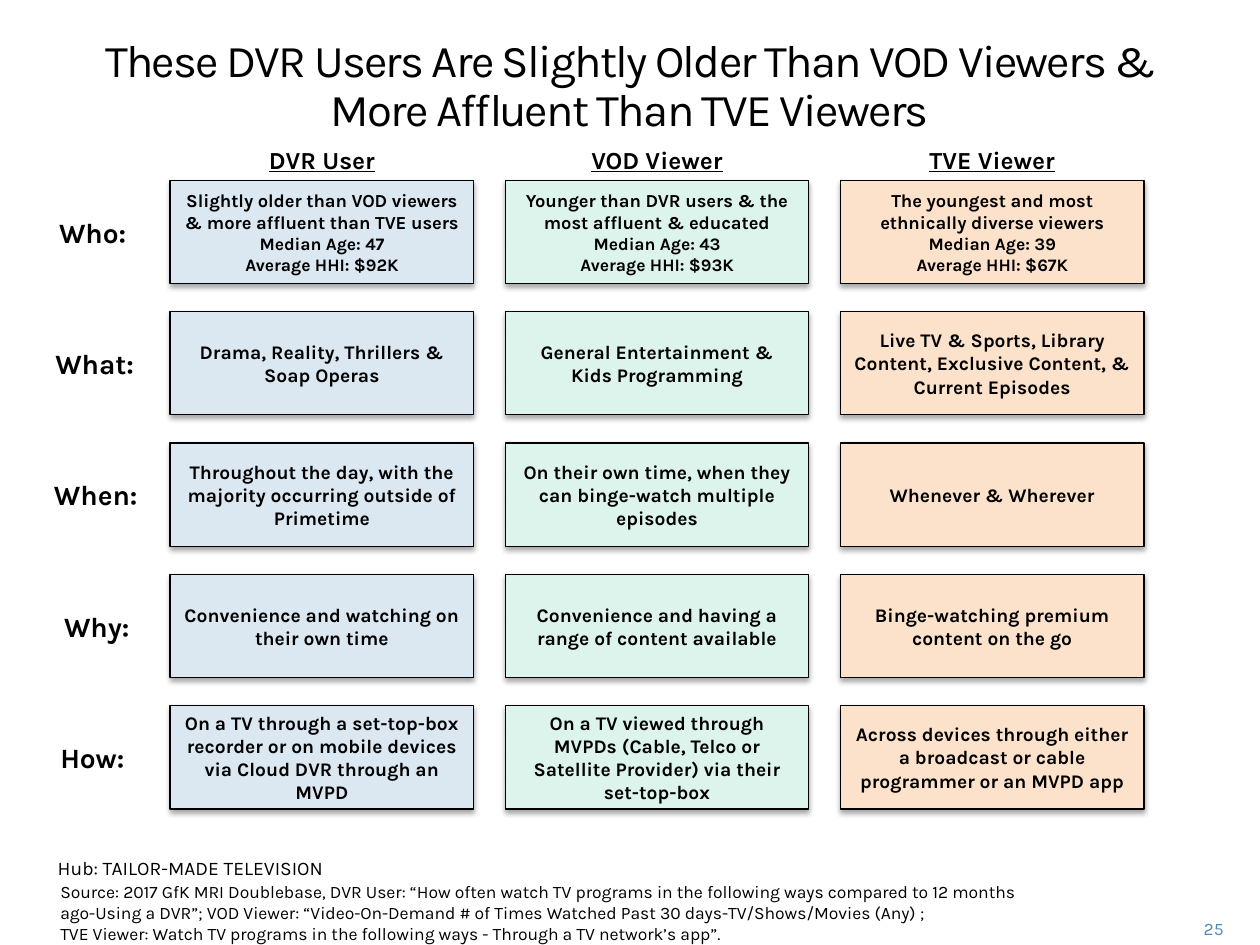
from dataclasses import dataclass

from lxml import etree
from pptx import Presentation
from pptx.dml.color import RGBColor
from pptx.enum.shapes import MSO_SHAPE
from pptx.enum.text import MSO_ANCHOR, PP_ALIGN
from pptx.oxml.ns import qn
from pptx.util import Inches, Pt

LEFT, CENTER, RIGHT = PP_ALIGN.LEFT, PP_ALIGN.CENTER, PP_ALIGN.RIGHT
MIDDLE = MSO_ANCHOR.MIDDLE
RECTANGLE = MSO_SHAPE.RECTANGLE
FONT = "Karla"
BLACK = "000000"

GRID_LEFT, COLUMN_PITCH, CARD_WIDTH = 1.35, 2.66, 2.41
GRID_TOP, GRID_LAST_TOP, CARD_HEIGHT = 1.43, 5.6, 0.82
HEADING_WIDTH = 2


@dataclass
class Line:
    text: str
    size: float
    bold: bool = False
    underline: bool = False
    color: str = BLACK


@dataclass
class Audience:
    heading: str
    fill: str
    who: str
    median_age: int
    income: str
    answers: list[str]


@dataclass
class Question:
    text: str
    left: float


AUDIENCES = [
    Audience("DVR User", "DBE7F1",
             "Slightly older than VOD viewers & more affluent than TVE users", 47, "$92K",
             ["Drama, Reality, Thrillers & Soap Operas",
              "Throughout the day, with the majority occurring outside of Primetime",
              "Convenience and watching on their own time",
              "On a TV through a set-top-box recorder or on mobile devices via Cloud DVR "
              "through an MVPD"]),
    Audience("VOD Viewer", "DCF4EC",
             "Younger than DVR users & the most affluent & educated", 43, "$93K",
             ["General Entertainment & Kids Programming",
              "On their own time, when they can binge-watch multiple episodes",
              "Convenience and having a range of content available",
              "On a TV viewed through MVPDs (Cable, Telco or Satellite Provider) via their "
              "set-top-box"]),
    Audience("TVE Viewer", "FDE2CB",
             "The youngest and most ethnically diverse viewers", 39, "$67K",
             ["Live TV & Sports, Library Content, Exclusive Content, & Current Episodes",
              "Whenever & Wherever",
              "Binge-watching premium content on the go",
              "Across devices through either a broadcast or cable programmer or an MVPD app"]),
]
QUESTIONS = [Question("Who:", 0.37), Question("What:", 0.34), Question("When:", 0.33),
             Question("Why:", 0.41), Question("How:", 0.38)]
ROW_PITCH = (GRID_LAST_TOP - GRID_TOP) / (len(QUESTIONS) - 1)
SOURCE = [
    "Source: 2017 GfK MRI Doublebase, DVR User: “How often watch TV programs in the "
    "following ways compared to 12 months",
    "ago-Using a DVR”; VOD Viewer: “Video-On-Demand # of Times Watched Past 30 "
    "days-TV/Shows/Movies (Any) ;",
    "TVE Viewer: Watch TV programs in the following ways - Through a TV network’s app”.",
]


def rgb(value: str) -> RGBColor:
    return RGBColor.from_string(value)


def write_lines(shape, lines: list[Line], align) -> None:
    frame = shape.text_frame
    for index, line in enumerate(lines):
        para = frame.paragraphs[0] if index == 0 else frame.add_paragraph()
        para.text = line.text
        para.alignment = align
        para.font.name = FONT
        para.font.size = Pt(line.size)
        para.font.bold = line.bold
        para.font.underline = line.underline
        para.font.color.rgb = rgb(line.color)


def add_text(page, left: float, top: float, width: float, height: float,
             lines: list[Line], align=LEFT, wrap: bool = True):
    box = page.shapes.add_textbox(Inches(left), Inches(top), Inches(width), Inches(height))
    box.text_frame.word_wrap = wrap
    write_lines(box, lines, align)
    return box


def add_shadow(shape) -> None:
    shape.shadow.inherit = False
    effects = shape._element.spPr.find(qn("a:effectLst"))
    shadow = etree.SubElement(effects, qn("a:outerShdw"), blurRad=str(Pt(3.1)),
                              dist=str(Pt(1.8)), dir="5400000", rotWithShape="0")
    color = etree.SubElement(shadow, qn("a:srgbClr"), val=BLACK)
    etree.SubElement(color, qn("a:alpha"), val="35000")


def add_card(page, left: float, top: float, fill: str, lines: list[Line]) -> None:
    card = page.shapes.add_shape(RECTANGLE, Inches(left), Inches(top),
                                 Inches(CARD_WIDTH), Inches(CARD_HEIGHT))
    card.fill.solid()
    card.fill.fore_color.rgb = rgb(fill)
    card.line.color.rgb = rgb(BLACK)
    card.line.width = Pt(0.75)
    add_shadow(card)
    card.text_frame.word_wrap = True
    card.text_frame.vertical_anchor = MIDDLE
    write_lines(card, lines, CENTER)


def add_title(page) -> None:
    title = add_text(page, 0.4, 0.25, 9.2, 0.5, [Line(
        "These DVR Users Are Slightly Older Than VOD Viewers & "
        "More Affluent Than TVE Viewers", 26)], CENTER)
    para = title.text_frame.paragraphs[0]
    para.line_spacing = Pt(28)
    para.runs[0].font._element.set("spc", "-100")


def add_audience(page, left: float, audience: Audience) -> None:
    add_text(page, left + (CARD_WIDTH - HEADING_WIDTH) / 2, 1.1, HEADING_WIDTH, 0.34,
             [Line(audience.heading, 14, bold=True, underline=True)], CENTER)
    profile = [Line(audience.who, 10.5, bold=True),
               Line(f"Median Age: {audience.median_age}", 10, bold=True),
               Line(f"Average HHI: {audience.income}", 10, bold=True)]
    answers = [[Line(answer, 11, bold=True)] for answer in audience.answers]
    for row, lines in enumerate([profile, *answers]):
        add_card(page, left, GRID_TOP + row * ROW_PITCH, audience.fill, lines)


def main() -> None:
    deck = Presentation()
    deck.slide_width, deck.slide_height = Inches(10), Inches(7.5)
    page = deck.slides.add_slide(deck.slide_layouts[6])
    add_title(page)
    for column, audience in enumerate(AUDIENCES):
        add_audience(page, GRID_LEFT + column * COLUMN_PITCH, audience)
    for row, question in enumerate(QUESTIONS):
        add_text(page, question.left, GRID_TOP + row * ROW_PITCH + 0.23, 0.89, 0.37,
                 [Line(question.text, 16, bold=True)])
    add_text(page, 0.38, 6.94, 7.99, 0.61, [Line(text, 10) for text in SOURCE], wrap=False)
    add_text(page, 0.36, 6.75, 3.08, 0.47, [Line("Hub: TAILOR-MADE TELEVISION", 11)])
    add_text(page, 9.2, 7.24, 0.61, 0.25, [Line("25", 10, color="508ABA")], RIGHT)
    deck.save("out.pptx")


if __name__ == "__main__":
    main()
